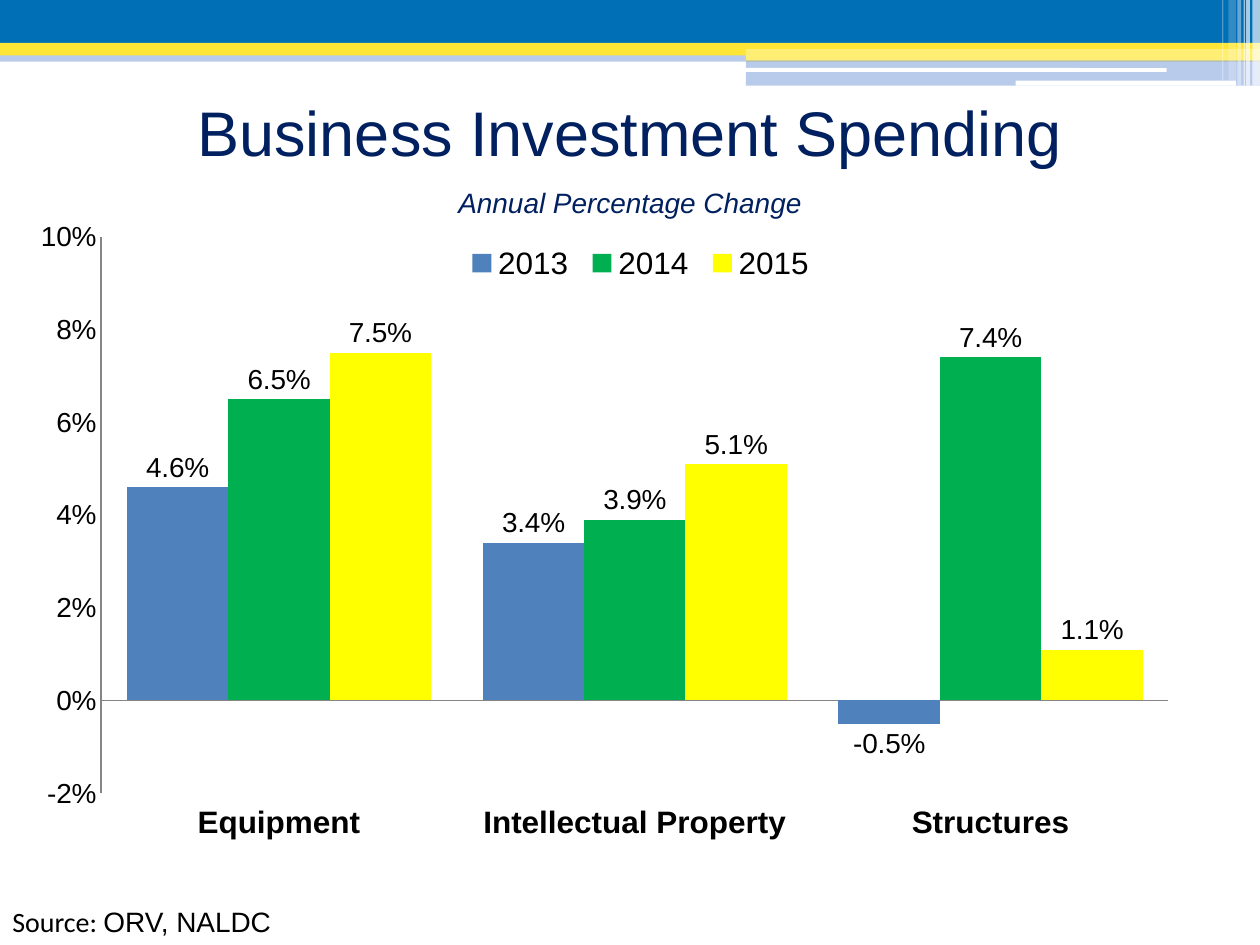
"""Build a slide with a clustered column chart of business investment spending."""
from lxml.etree import SubElement
from pptx import Presentation
from pptx.chart.data import CategoryChartData
from pptx.dml.color import RGBColor
from pptx.enum.chart import (XL_CHART_TYPE, XL_LABEL_POSITION, XL_LEGEND_POSITION,
                             XL_TICK_LABEL_POSITION, XL_TICK_MARK)
from pptx.enum.shapes import MSO_SHAPE
from pptx.enum.text import MSO_ANCHOR, MSO_AUTO_SIZE, PP_ALIGN
from pptx.oxml import parse_xml
from pptx.oxml.ns import nsdecls, qn
from pptx.util import Inches, Pt

COLORS = {"navy": "002060", "black": "000000", "white": "FFFFFF", "band": "006FB6",
          "gold": "FFE636", "pale gold": "FFEE74", "periwinkle": "7598D9",
          "axis": "868686", "2013": "4F81BD", "2014": "00B050", "2015": "FFFF00"}

TITLE = "Business Investment Spending"
SUBTITLE = "Annual Percentage Change"
SOURCE = [("Source: ", "Calibri"), ("ORV, NALDC", "Arial")]
CATEGORIES = ["Equipment", "Intellectual Property", "Structures"]
SERIES = {"2013": (0.046, 0.034, -0.005),
          "2014": (0.065, 0.039, 0.074),
          "2015": (0.075, 0.051, 0.011)}

WIDTH, HEIGHT = 10, 7.5
BANNER = [
    ((0, 0.4, WIDTH, 0.09), "periwinkle", 50),
    ((0, 0, WIDTH, 0.34), "band", 100),
    ((0, 0.34, WIDTH, 0.1), "gold", 100),
    ((5.92, 0.39, 4.08, 0.1), "pale gold", 100),
    ((5.92, 0.48, 4.08, 0.2), "periwinkle", 50),
]
SLOTS = [(5.91, 0.54, 3.35, 0.03), (8.06, 0.64, 1.75, 0.04)]
STRIPES = [(9.94, 0.06, 0.68, 65), (9.89, 0.03, 0.68, 65), (9.87, 0.01, 0.68, 60),
           (9.82, 0.03, 0.68, 40), (9.75, 0.06, 0.64, 20), (9.7, 0.01, 0.64, 30)]


def rgb(name):
    return RGBColor.from_string(COLORS[name])


def place(box):
    return [Inches(length) for length in box]


def add_block(slide, box, color, opacity=100, kind=MSO_SHAPE.RECTANGLE):
    block = slide.shapes.add_shape(kind, *place(box))
    block.shadow.inherit = False
    block.line.fill.background()
    block.fill.solid()
    block.fill.fore_color.rgb = rgb(color)
    if opacity < 100:
        tint = block.fill._xPr.find(qn("a:solidFill"))[0]
        SubElement(tint, qn("a:alpha"), val=str(opacity * 1000))


def style_font(font, size, color="black", name="Arial", bold=False, italic=False):
    font.size, font.name = Pt(size), name
    font.bold, font.italic = bold, italic
    font.color.rgb = rgb(color)


def write(holder, runs, size, align=PP_ALIGN.LEFT, anchor=MSO_ANCHOR.TOP, **style):
    frame = holder.text_frame
    frame.word_wrap = True
    frame.auto_size = MSO_AUTO_SIZE.NONE
    frame.vertical_anchor = anchor
    paragraph = frame.paragraphs[0]
    paragraph.alignment = align
    for text, name in runs:
        run = paragraph.add_run()
        run.text = text
        style_font(run.font, size, name=name, **style)


def set_layout(element, index, shares, inner=False):
    for old in element.findall(qn("c:layout")):
        element.remove(old)
    target = '<c:layoutTarget val="inner"/>' if inner else ""
    modes = "".join(f'<c:{axis}Mode val="edge"/>' for axis in "xy")
    sizes = "".join(f'<c:{key} val="{share}"/>' for key, share in zip("xywh", shares))
    element.insert(index, parse_xml(
        f'<c:layout {nsdecls("c")}><c:manualLayout>{target}{modes}{sizes}'
        "</c:manualLayout></c:layout>"))


def add_spending_chart(slide, box):
    data = CategoryChartData(number_format="0.0%")
    data.categories = CATEGORIES
    for year, changes in SERIES.items():
        data.add_series(year, changes)
    chart = slide.shapes.add_chart(
        XL_CHART_TYPE.COLUMN_CLUSTERED, *place(box), data).chart
    style_font(chart.font, 16)
    chart.has_title = False

    chart.has_legend = True
    legend = chart.legend
    legend.position = XL_LEGEND_POSITION.TOP
    legend.include_in_layout = False
    style_font(legend.font, 18)
    set_layout(legend._element, 1, (0.39, 0.03, 0.31, 0.08))

    plot = chart.plots[0]
    plot.gap_width, plot.overlap = 51, 0
    plot.vary_by_categories = False
    for series in plot.series:
        series.invert_if_negative = False
        series.format.fill.solid()
        series.format.fill.fore_color.rgb = rgb(series.name)
        labels = series.data_labels
        labels.show_value = True
        labels.number_format, labels.number_format_is_linked = "0.0%", False
        labels.position = XL_LABEL_POSITION.OUTSIDE_END
        style_font(labels.font, 16)
    set_layout(chart._chartSpace.chart.plotArea, 0, (0.086, 0.027, 0.908, 0.912), inner=True)

    for axis, size, bold in ((chart.category_axis, 18, True), (chart.value_axis, 16, False)):
        axis.has_major_gridlines = False
        axis.major_tick_mark = axis.minor_tick_mark = XL_TICK_MARK.NONE
        axis.format.line.color.rgb = rgb("axis")
        axis.format.line.width = Pt(0.75)
        style_font(axis.tick_labels.font, size, bold=bold)
    chart.category_axis.tick_label_position = XL_TICK_LABEL_POSITION.LOW
    scale = chart.value_axis
    scale.minimum_scale, scale.maximum_scale, scale.major_unit = -0.02, 0.1, 0.02
    scale.tick_labels.number_format = "0%"
    scale.tick_labels.number_format_is_linked = False


def main():
    deck = Presentation()
    deck.slide_width, deck.slide_height = Inches(WIDTH), Inches(HEIGHT)
    slide = deck.slides.add_slide(deck.slide_layouts[5])

    for box, color, opacity in BANNER:
        add_block(slide, box, color, opacity)
    for box in SLOTS:
        add_block(slide, box, "white", kind=MSO_SHAPE.ROUNDED_RECTANGLE)
    for left, width, height, opacity in STRIPES:
        add_block(slide, (left, 0, width, height), "white", opacity)

    add_spending_chart(slide, (0, 1.75, 9.33, 4.92))

    title = slide.shapes.title
    title.left, title.top, title.width, title.height = place((0, 0.5, WIDTH, 1.08))
    write(title, [(TITLE, "Arial")], 36, PP_ALIGN.CENTER, MSO_ANCHOR.MIDDLE, color="navy")
    subtitle = slide.shapes.add_textbox(*place((0, 1.42, WIDTH, 0.37)))
    write(subtitle, [(SUBTITLE, "Arial")], 16, PP_ALIGN.CENTER, color="navy", italic=True)
    source = slide.shapes.add_textbox(*place((0, HEIGHT - 0.37, 6.75, 0.37)))
    write(source, SOURCE, 16)

    deck.save("out.pptx")


if __name__ == "__main__":
    main()
